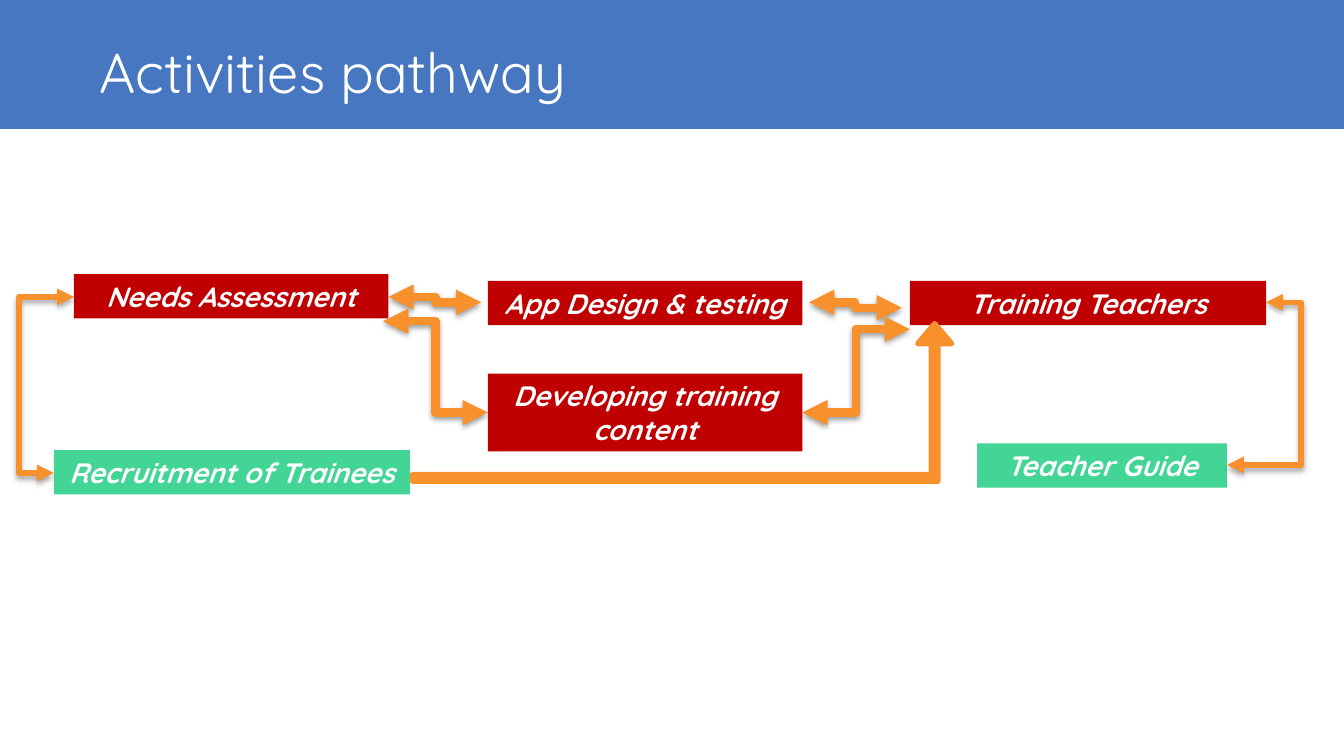
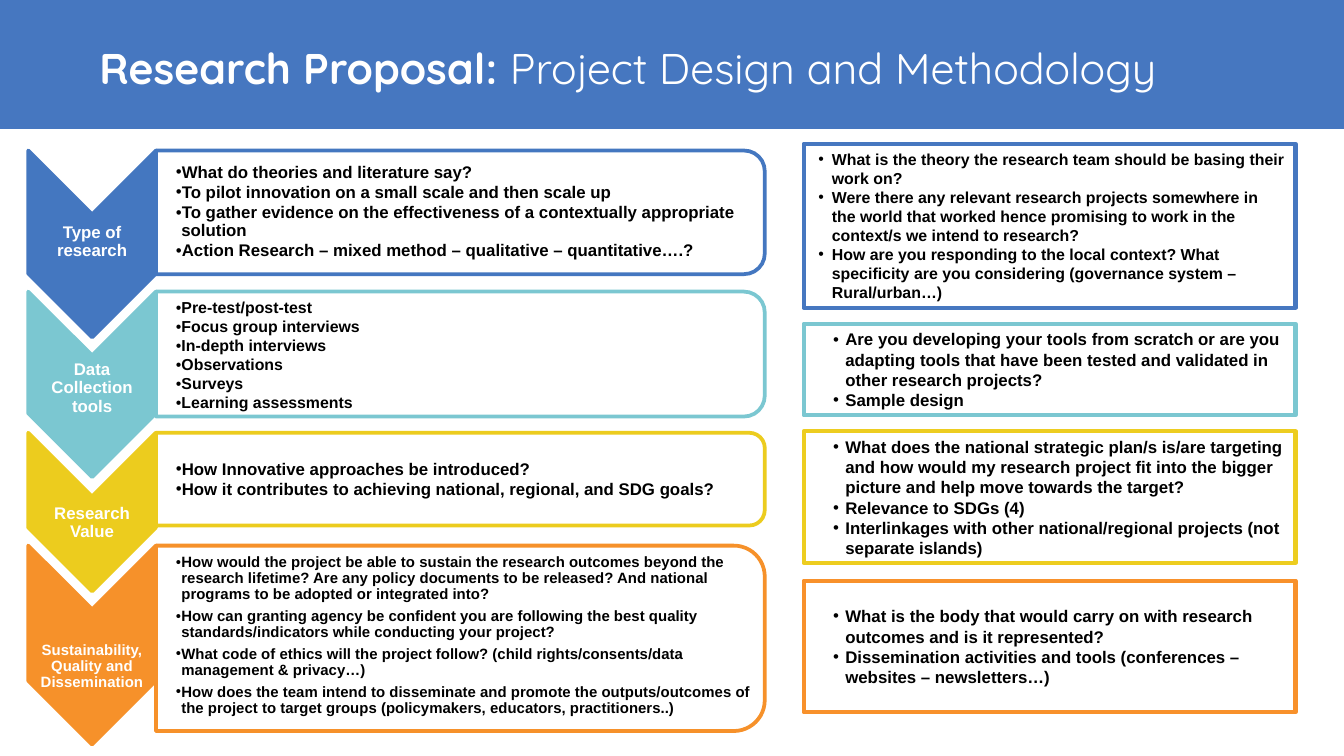
from dataclasses import dataclass
from typing import Sequence

from lxml.etree import SubElement
from pptx import Presentation
from pptx.dml.color import RGBColor as Rgb
from pptx.enum.shapes import MSO_CONNECTOR as Link, MSO_SHAPE as Kind
from pptx.enum.text import MSO_ANCHOR as Anchor, PP_ALIGN as Align
from pptx.oxml.ns import qn
from pptx.util import Inches, Pt


@dataclass(frozen=True)
class Theme:
    white: str = "FFFFFF"
    black: str = "000000"
    blue: str = "4677C0"
    deep: str = "4477C0"
    teal: str = "7BC7D1"
    gold: str = "ECCC1E"
    lemon: str = "EDCD20"
    amber: str = "F6912A"
    orange: str = "F8912B"
    red: str = "C00000"
    green: str = "43D596"
    head: str = "Quicksand"
    body: str = "Arial"
    title: float = 30
    long: float = 23
    step: float = 15
    text: float = 9
    small: float = 8.5
    tiny: float = 8


THEME = Theme()
PAD = (0.07, 0.04, 0.07, 0.04)
SLIM = (0.01, 0.01, 0.01, 0.01)


@dataclass(frozen=True)
class Step:
    text: str
    left: float
    top: float
    wide: float
    tall: float
    color: str


@dataclass(frozen=True)
class Path:
    start: tuple[float, float]
    end: tuple[float, float]
    bend: float
    width: float = 4.5


@dataclass(frozen=True)
class Row:
    label: str
    color: str
    top: float
    chev: float
    tall: float
    label_mid: float
    body_mid: float
    label_size: float
    size: float
    gap: float
    items: tuple[str, ...]


@dataclass(frozen=True)
class Note:
    color: str
    top: float
    tall: float
    size: float
    indent: float
    hang: float
    items: tuple[str, ...]


STEPS = (
    Step("Teacher Guide", 7.27, 3.3, 1.86, 0.33, THEME.green),
    Step("Needs Assessment", 0.55, 2.04, 2.34, 0.33, THEME.red),
    Step("Recruitment of Trainees", 0.4, 3.35, 2.65, 0.33, THEME.green),
    Step("App Design & testing", 3.63, 2.09, 2.34, 0.33, THEME.red),
    Step("Developing training content", 3.63, 2.78, 2.34, 0.58, THEME.red),
    Step("Training Teachers", 6.77, 2.09, 2.65, 0.33, THEME.red),
)

PATHS = (
    Path((0.4, 3.52), (0.55, 2.21), 0.14, 3),
    Path((2.89, 2.21), (3.58, 2.25), 3.24),
    Path((2.85, 2.39), (3.63, 3.07), 3.24),
    Path((6.02, 2.25), (6.71, 2.29), 6.36),
    Path((5.97, 3.07), (6.77, 2.45), 6.37),
    Path((9.13, 3.46), (9.42, 2.25), 9.68, 3),
)

ROWS = (
    Row("Type of research", THEME.deep, 1.12, 1.39, 0.92, 1.8, 1.58,
        THEME.text, THEME.text, 1, (
            "What do theories and literature say?",
            "To pilot innovation on a small scale and then scale up",
            "To gather evidence on the effectiveness of a contextually appropriate solution",
            "Action Research – mixed method – qualitative – quantitative….?")),
    Row("Data Collection tools", THEME.teal, 2.17, 1.38, 0.93, 2.89, 2.65,
        THEME.text, THEME.small, 1, (
            "Pre-test/post-test", "Focus group interviews", "In-depth interviews",
            "Observations", "Surveys", "Learning assessments")),
    Row("Research Value", THEME.gold, 3.22, 1.18, 0.69, 3.89, 3.57,
        THEME.text, THEME.text, 1, (
            "How Innovative approaches be introduced?",
            "How it contributes to achieving national, regional, and SDG goals?")),
    Row("Sustainability, Quality and Dissemination", THEME.amber, 4.06, 1.48, 1.38,
        4.96, 4.73, THEME.tiny, THEME.tiny, 3, (
            "How would the project be able to sustain the research outcomes beyond the "
            "research lifetime? Are any policy documents to be released? And national "
            "programs to be adopted or integrated into?",
            "How can granting agency be confident you are following the best quality "
            "standards/indicators while conducting your project?",
            "What code of ethics will the project follow? (child rights/consents/data "
            "management & privacy…)",
            "How does the team intend to disseminate and promote the outputs/outcomes of "
            "the project to target groups (policymakers, educators, practitioners..)")),
)

NOTES = (
    Note(THEME.blue, 1.07, 1.22, THEME.small, 0.14, 0.1, (
        "What is the theory the research team should be basing their work on?",
        "Were there any relevant research projects somewhere in the world that worked "
        "hence promising to work in the context/s we intend to research?",
        "How are you responding to the local context? What specificity are you "
        "considering (governance system – Rural/urban…)")),
    Note(THEME.teal, 2.41, 0.68, THEME.text, 0.24, 0.09, (
        "Are you developing your tools from scratch or are you adapting tools that have "
        "been tested and validated in other research projects?",
        "Sample design")),
    Note(THEME.lemon, 3.21, 0.98, THEME.text, 0.24, 0.09, (
        "What does the national strategic plan/s is/are targeting and how would my "
        "research project fit into the bigger picture and help move towards the target?",
        "Relevance to SDGs (4)",
        "Interlinkages with other national/regional projects (not separate islands)")),
    Note(THEME.orange, 4.32, 0.98, THEME.text, 0.24, 0.09, (
        "What is the body that would carry on with research outcomes and is it represented?",
        "Dissemination activities and tools (conferences – websites – newsletters…)")),
)


def write(shape, items: Sequence[str], *, size: float, font: str = THEME.body,
          color: str = THEME.black, bold: bool = True, italic: bool = False,
          align=Align.LEFT, pad=PAD, line: float = 1, gap: float = 0,
          indent: float = 0, hang: float = 0, lead: str = "") -> None:
    frame = shape.text_frame
    frame.word_wrap = True
    frame.vertical_anchor = Anchor.MIDDLE
    (frame.margin_left, frame.margin_top,
     frame.margin_right, frame.margin_bottom) = map(Inches, pad)
    for index, item in enumerate(items):
        para = frame.add_paragraph() if index else frame.paragraphs[0]
        if hang:
            props = para._p.get_or_add_pPr()
            props.set("marL", str(Inches(indent)))
            props.set("indent", str(-Inches(hang)))
            tint = SubElement(props, qn("a:buClr"))
            SubElement(tint, qn("a:srgbClr"), val=color)
            SubElement(props, qn("a:buFont"), typeface=font)
            SubElement(props, qn("a:buChar"), char="•")
        para.alignment = align
        para.line_spacing = line
        if index and gap:
            para.space_before = Pt(gap)
        for part, heavy in ((lead, True), (item, bold)):
            if part:
                run = para.add_run()
                run.text = part
                face = run.font
                face.name, face.size = font, Pt(size)
                face.bold, face.italic = heavy, italic
                face.color.rgb = Rgb.from_string(color)


def draw(slide, kind, left: float, top: float, wide: float, tall: float, *,
         fill: str = "", edge: str = "", width: float = 2,
         adjust: Sequence[float] = (), turn: bool = False):
    if turn:
        left, top = left + (wide - tall) / 2, top + (tall - wide) / 2
        wide, tall = tall, wide
    shape = slide.shapes.add_shape(kind, *map(Inches, (left, top, wide, tall)))
    shape.shadow.inherit = False
    shape.rotation = 90 if turn else 0
    for index, value in enumerate(adjust):
        shape.adjustments[index] = value
    if fill:
        shape.fill.solid()
        shape.fill.fore_color.rgb = Rgb.from_string(fill)
    else:
        shape.fill.background()
    if edge:
        shape.line.color.rgb = Rgb.from_string(edge)
        shape.line.width = Pt(width)
    else:
        shape.line.fill.background()
    return shape


def label(slide, items: Sequence[str], left: float, top: float,
          wide: float, tall: float, **style) -> None:
    box = slide.shapes.add_textbox(*map(Inches, (left, top, wide, tall)))
    write(box, items, **style)


def join(slide, path: Path) -> None:
    (x1, y1), (x2, y2) = path.start, path.end
    link = slide.shapes.add_connector(Link.ELBOW, *map(Inches, (x1, y1, x2, y2)))
    link.line.color.rgb = Rgb.from_string(THEME.orange)
    link.line.width = Pt(path.width)
    props = link._element.spPr
    ratio = round((path.bend - x1) / (x2 - x1) * 100000)
    guides = props.find(qn("a:prstGeom")).get_or_add_avLst()
    SubElement(guides, qn("a:gd"), name="adj1", fmla=f"val {ratio}")
    stroke = link.line._get_or_add_ln()
    for tip in ("a:headEnd", "a:tailEnd"):
        SubElement(stroke, qn(tip), type="triangle")
    effects = SubElement(props, qn("a:effectLst"))
    thin = path.width < 4
    shade = SubElement(effects, qn("a:outerShdw"), blurRad=str(Pt(3.1)),
                       dist=str(Pt(1.8 if thin else 1.6)), dir="5400000",
                       rotWithShape="0")
    black = SubElement(shade, qn("a:srgbClr"), val=THEME.black)
    SubElement(black, qn("a:alpha"), val="35000" if thin else "38000")


def start(deck, title: str, top: float, size: float, lead: str = ""):
    slide = deck.slides.add_slide(deck.slide_layouts[6])
    draw(slide, Kind.RECTANGLE, 0, -0.02, 10, 0.98, fill=THEME.blue)
    label(slide, [title], 0.67, top, 8.67, 0.8, size=size, font=THEME.head,
          color=THEME.white, bold=False, lead=lead)
    return slide


def show_steps(deck) -> None:
    slide = start(deck, "Activities pathway", 0.13, THEME.title)
    for step in STEPS:
        box = draw(slide, Kind.RECTANGLE, step.left, step.top, step.wide, step.tall,
                   fill=step.color)
        write(box, [step.text], size=THEME.step, font=THEME.head, color=THEME.white,
              italic=True, align=Align.CENTER)
    for path in PATHS[:-1]:
        join(slide, path)
    draw(slide, Kind.BENT_UP_ARROW, 3.07, 2.41, 4.01, 1.17, fill=THEME.orange,
         edge=THEME.orange, width=3, adjust=(0.04, 0.107, 0.126))
    join(slide, PATHS[-1])


def show_row(slide, row: Row) -> None:
    draw(slide, Kind.CHEVRON, 0.21, row.top, 0.95, row.chev, fill=row.color,
         edge=row.color, adjust=(0.5,), turn=True)
    label(slide, [row.label], 0.28, row.label_mid - 0.2, 0.81, 0.4,
          size=row.label_size, color=THEME.white, align=Align.CENTER,
          pad=SLIM, line=0.9)
    panel = draw(slide, Kind.ROUND_2_SAME_RECTANGLE, 1.16, row.top, 4.53, row.tall,
                 fill=THEME.white, edge=row.color, adjust=(0.167, 0), turn=True)
    paint = panel._element.spPr.find(qn("a:solidFill"))
    SubElement(paint[0], qn("a:alpha"), val="90000")
    tall = row.tall - 0.08
    label(slide, row.items, 1.25, row.body_mid - tall / 2, 4.4, tall, size=row.size,
          pad=(0.06, 0.01, 0.01, 0.01), line=0.9, gap=row.gap, indent=0.04, hang=0.06)


def show_plan(deck) -> None:
    slide = start(deck, "Project Design and Methodology", 0.1, THEME.long,
                  "Research Proposal: ")
    for row in ROWS:
        show_row(slide, row)
    for note in NOTES:
        box = draw(slide, Kind.RECTANGLE, 5.98, note.top, 3.66, note.tall,
                   edge=note.color, width=2.25)
        write(box, note.items, size=note.size, indent=note.indent, hang=note.hang)


def main() -> None:
    deck = Presentation()
    deck.slide_width = Inches(10)
    deck.slide_height = deck.slide_width * 9 // 16
    show_steps(deck)
    show_plan(deck)
    deck.save("out.pptx")


if __name__ == "__main__":
    main()
